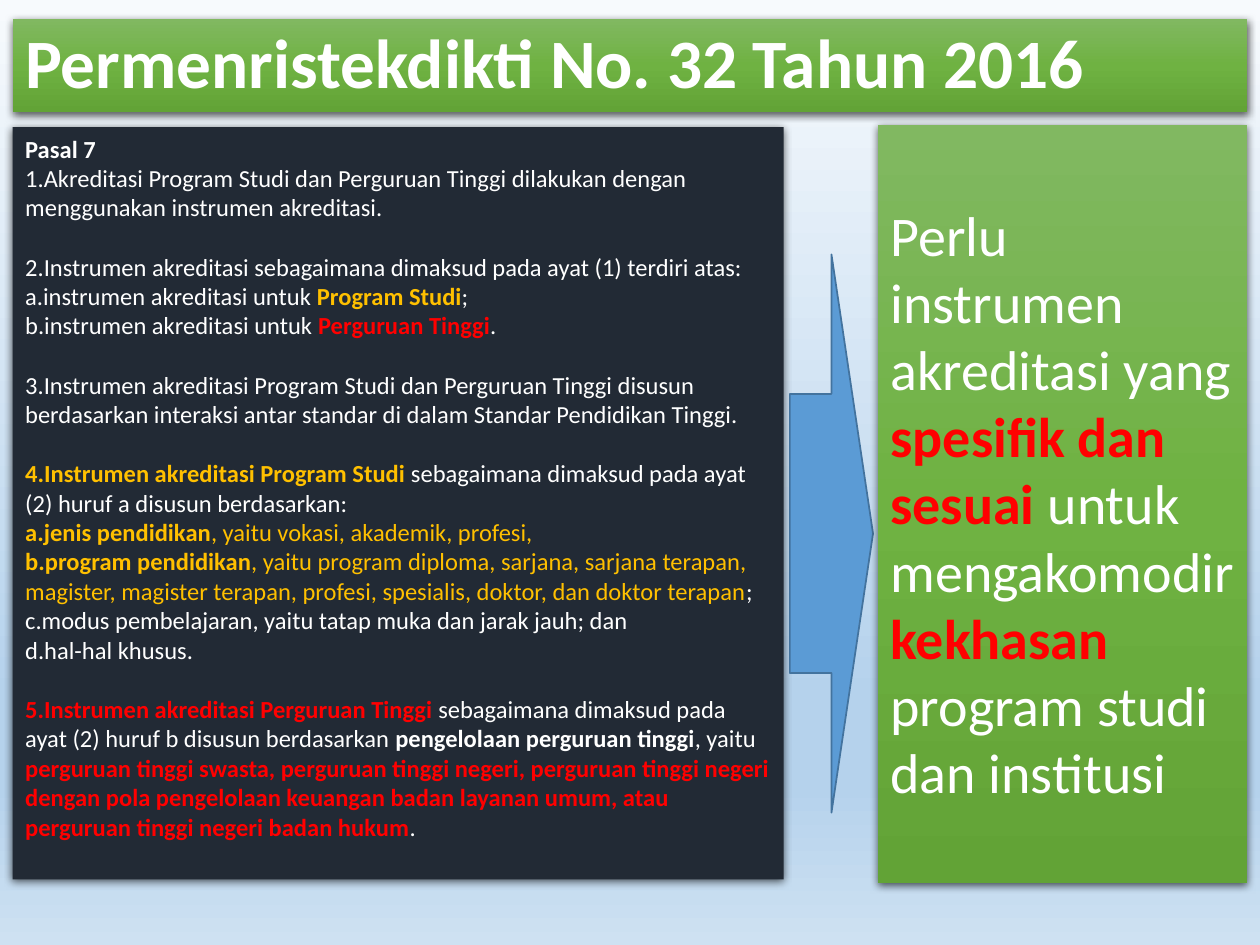
from dataclasses import dataclass

from lxml.etree import SubElement
from pptx import Presentation
from pptx.dml.color import RGBColor
from pptx.dml.fill import FillFormat
from pptx.enum.shapes import MSO_SHAPE
from pptx.enum.text import MSO_ANCHOR, MSO_AUTO_SIZE, PP_ALIGN
from pptx.oxml.ns import qn
from pptx.shapes.autoshape import Shape
from pptx.text.text import _Paragraph as Paragraph
from pptx.util import Pt


@dataclass(frozen=True)
class Theme:
    font: str = "Calibri"
    title_size: float = 39.6
    article_size: float = 14
    conclusion_size: float = 32
    white: str = "FFFFFF"
    amber: str = "FFC000"
    red: str = "FF0000"
    panel: str = "222A35"
    arrow: str = "5B9BD5"
    arrow_line: str = "43739E"
    green: tuple = ((0, "81B861"), (50, "6FB242"), (100, "62A336"))
    sky: tuple = ((0, "F7FAFD"), (74, "B5D2EC"), (83, "B5D2EC"), (100, "CEE1F2"))


THEME = Theme()


@dataclass(frozen=True)
class Span:
    text: str
    color: str = THEME.white
    bold: bool = False


@dataclass(frozen=True)
class Item:
    spans: tuple[Span, ...]
    numbering: str = "arabicPeriod"
    level: int = 0
    gap: float = 0


@dataclass(frozen=True)
class Box:
    left: float
    top: float
    width: float
    height: float

    def lengths(self) -> tuple:
        return Pt(self.left), Pt(self.top), Pt(self.width), Pt(self.height)


def clause(*spans: Span, gap: float = 17) -> Item:
    return Item(spans, gap=gap)


def point(*spans: Span) -> Item:
    return Item(spans, "alphaLcPeriod", 1)


ARTICLE = (
    Item((Span("Pasal 7", bold=True),), numbering=""),
    clause(Span("Akreditasi Program Studi dan Perguruan Tinggi dilakukan dengan "
                "menggunakan instrumen akreditasi."), gap=0),
    clause(Span("Instrumen akreditasi sebagaimana dimaksud pada ayat (1) terdiri atas:")),
    point(Span("instrumen akreditasi untuk "), Span("Program Studi", THEME.amber, True), Span(";")),
    point(Span("instrumen akreditasi untuk "), Span("Perguruan Tinggi", THEME.red, True), Span(".")),
    clause(Span("Instrumen akreditasi Program Studi dan Perguruan Tinggi disusun berdasarkan "
                "interaksi antar standar di dalam Standar Pendidikan Tinggi.")),
    clause(Span("Instrumen akreditasi Program Studi", THEME.amber, True),
           Span(" sebagaimana dimaksud pada ayat (2) huruf a disusun berdasarkan:")),
    point(Span("jenis pendidikan", THEME.amber, True),
          Span(", yaitu vokasi, akademik, profesi,", THEME.amber)),
    point(Span("program pendidikan", THEME.amber, True),
          Span(", yaitu program diploma, sarjana, sarjana terapan, magister, magister terapan, "
               "profesi, spesialis, doktor, dan doktor terapan", THEME.amber),
          Span(";")),
    point(Span("modus pembelajaran, yaitu tatap muka dan jarak jauh; dan")),
    point(Span("hal-hal khusus.")),
    clause(Span("Instrumen akreditasi Perguruan Tinggi", THEME.red, True),
           Span(" sebagaimana dimaksud pada ayat (2) huruf b disusun berdasarkan "),
           Span("pengelolaan perguruan tinggi", bold=True),
           Span(", yaitu "),
           Span("perguruan tinggi swasta, perguruan tinggi negeri, perguruan tinggi negeri dengan "
                "pola pengelolaan keuangan badan layanan umum, atau perguruan tinggi negeri badan "
                "hukum", THEME.red, True),
           Span(".")),
)

CONCLUSION = (
    Span("Perlu instrumen akreditasi yang "),
    Span("spesifik dan sesuai", THEME.red, True),
    Span(" untuk mengakomodir "),
    Span("kekhasan", THEME.red, True),
    Span(" program studi dan institusi"),
)


def place(shape: Shape, box: Box) -> None:
    shape.left, shape.top, shape.width, shape.height = box.lengths()


def fill_solid(fill: FillFormat, color: str) -> None:
    fill.solid()
    fill.fore_color.rgb = RGBColor.from_string(color)


def fill_gradient(fill: FillFormat, owner, stops: tuple) -> None:
    fill.gradient()
    fill.gradient_angle = 270
    stop_list = next(owner.iter(qn("a:gsLst")))
    stop_list.clear()
    for position, color in stops:
        stop = SubElement(stop_list, qn("a:gs"), pos=str(position * 1000))
        SubElement(stop, qn("a:srgbClr"), val=color)


def add_shadow(shape: Shape) -> None:
    shape.shadow.inherit = False
    effects = next(shape.element.iter(qn("a:effectLst")))
    shadow = SubElement(effects, qn("a:outerShdw"), blurRad=str(Pt(4.5)), dist=str(Pt(1.5)),
                        dir="5400000", algn="ctr", rotWithShape="0")
    color = SubElement(shadow, qn("a:srgbClr"), val="000000")
    SubElement(color, qn("a:alpha"), val="63000")


def write_spans(paragraph: Paragraph, spans: tuple[Span, ...], size: float) -> None:
    paragraph.alignment = PP_ALIGN.LEFT
    paragraph.font.name = THEME.font
    paragraph.font.size = Pt(size)
    for span in spans:
        run = paragraph.add_run()
        run.text = span.text
        run.font.bold = span.bold
        run.font.color.rgb = RGBColor.from_string(span.color)


def set_numbering(paragraph: Paragraph, numbering: str) -> None:
    properties = paragraph._p.get_or_add_pPr()
    properties.set("marL", "0")
    properties.set("indent", str(-Pt(27)) if numbering else "0")
    if numbering:
        SubElement(properties, qn("a:buFont"), typeface="+mj-lt")
        SubElement(properties, qn("a:buAutoNum"), type=numbering)
    else:
        SubElement(properties, qn("a:buNone"))


def write_article(shape: Shape, items: tuple[Item, ...]) -> None:
    frame = shape.text_frame
    frame.auto_size = MSO_AUTO_SIZE.NONE
    frame.vertical_anchor = MSO_ANCHOR.TOP
    for index, item in enumerate(items):
        paragraph = frame.add_paragraph() if index else frame.paragraphs[0]
        paragraph.level = item.level
        paragraph.space_before = Pt(item.gap)
        set_numbering(paragraph, item.numbering)
        write_spans(paragraph, item.spans, THEME.article_size)


def main() -> None:
    presentation = Presentation()
    presentation.slide_width, presentation.slide_height = Pt(720), Pt(540)
    slide = presentation.slides.add_slide(presentation.slide_layouts[1])
    fill_gradient(slide.background.fill, slide.element, THEME.sky)

    title = slide.shapes.title
    place(title, Box(7.2, 10.8, 705.6, 53.3))
    fill_gradient(title.fill, title.element, THEME.green)
    add_shadow(title)
    title.text_frame.auto_size = MSO_AUTO_SIZE.NONE
    title.text_frame.vertical_anchor = MSO_ANCHOR.MIDDLE
    heading = title.text_frame.paragraphs[0]
    heading.line_spacing = 0.9
    write_spans(heading, (Span("Permenristekdikti No. 32 Tahun 2016", bold=True),), THEME.title_size)

    article = slide.placeholders[1]
    place(article, Box(7.2, 72.7, 440.6, 429.8))
    fill_solid(article.fill, THEME.panel)
    add_shadow(article)
    write_article(article, ARTICLE)

    arrow = slide.shapes.add_shape(MSO_SHAPE.RIGHT_ARROW, *Box(451.4, 145.4, 47.5, 319).lengths())
    arrow.shadow.inherit = False
    fill_solid(arrow.fill, THEME.arrow)
    arrow.line.color.rgb = RGBColor.from_string(THEME.arrow_line)
    arrow.line.width = Pt(1)

    conclusion = slide.shapes.add_shape(MSO_SHAPE.RECTANGLE, *Box(501.8, 71.3, 211, 433.4).lengths())
    fill_gradient(conclusion.fill, conclusion.element, THEME.green)
    conclusion.line.fill.background()
    add_shadow(conclusion)
    frame = conclusion.text_frame
    frame.word_wrap = True
    frame.vertical_anchor = MSO_ANCHOR.TOP
    frame.margin_top = Pt(43)
    write_spans(frame.paragraphs[0], CONCLUSION, THEME.conclusion_size)

    presentation.save("out.pptx")


if __name__ == "__main__":
    main()
